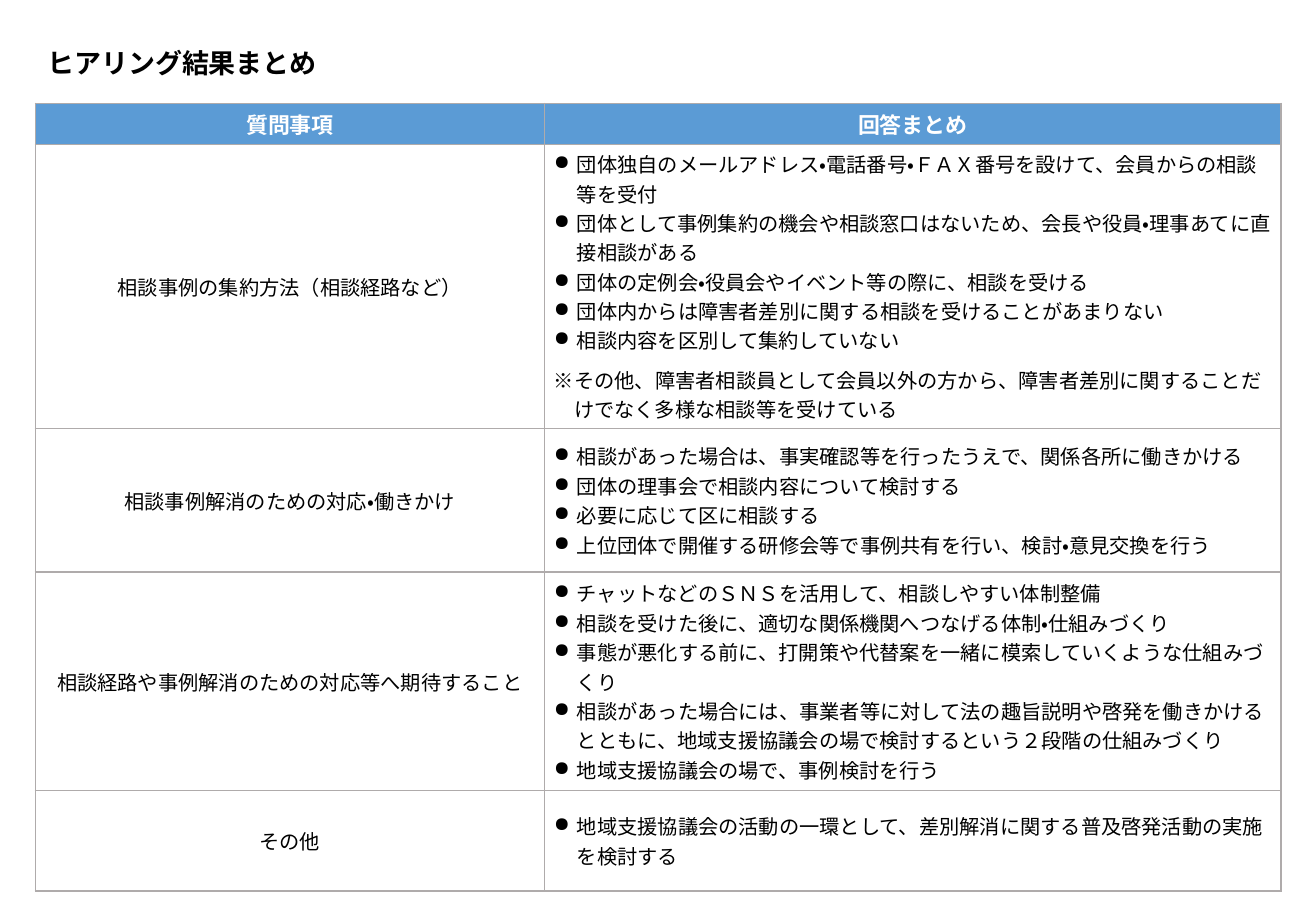
from dataclasses import dataclass

import lxml.etree
import pptx
import pptx.dml.color
import pptx.enum.lang
import pptx.enum.text
import pptx.oxml.ns
import pptx.util

Cm = pptx.util.Cm
Pt = pptx.util.Pt
Align = pptx.enum.text.PP_ALIGN
qn = pptx.oxml.ns.qn

FONT = "Calibri"
COLOURS = {
    "header": "5B9BD5",
    "header_text": "FFFFFF",
    "body": "FFFFFF",
    "text": "000000",
    "border": "AFABAB",
}
HEADINGS = ("質問事項", "回答まとめ")
COLUMN_WIDTHS = (10.64, 15.4)
HEADER_HEIGHT = 0.77
BULLET_INDENT = 0.48
NOTE_INDENT = 0.42


@dataclass(frozen=True)
class Topic:
    question: str
    answers: tuple[str, ...]
    height: float
    note: str = ""


TOPICS = (
    Topic(
        "相談事例の集約方法（相談経路など）",
        (
            "団体独自のメールアドレス・電話番号・ＦＡＸ番号を設けて、会員からの相談等を受付",
            "団体として事例集約の機会や相談窓口はないため、会長や役員・理事あてに直接相談がある",
            "団体の定例会・役員会やイベント等の際に、相談を受ける",
            "団体内からは障害者差別に関する相談を受けることがあまりない",
            "相談内容を区別して集約していない",
        ),
        5.9,
        "※その他、障害者相談員として会員以外の方から、障害者差別に関することだけでなく多様な相談等を受けている",
    ),
    Topic(
        "相談事例解消のための対応・働きかけ",
        (
            "相談があった場合は、事実確認等を行ったうえで、関係各所に働きかける",
            "団体の理事会で相談内容について検討する",
            "必要に応じて区に相談する",
            "上位団体で開催する研修会等で事例共有を行い、検討・意見交換を行う",
        ),
        3.0,
    ),
    Topic(
        "相談経路や事例解消のための対応等へ期待すること",
        (
            "チャットなどのＳＮＳを活用して、相談しやすい体制整備",
            "相談を受けた後に、適切な関係機関へつなげる体制・仕組みづくり",
            "事態が悪化する前に、打開策や代替案を一緒に模索していくような仕組みづくり",
            "相談があった場合には、事業者等に対して法の趣旨説明や啓発を働きかけるとともに、地域支援協議会の場で検討するという２段階の仕組みづくり",
            "地域支援協議会の場で、事例検討を行う",
        ),
        4.57,
    ),
    Topic(
        "その他",
        ("地域支援協議会の活動の一環として、差別解消に関する普及啓発活動の実施を検討する",),
        2.1,
    ),
)


def rgb(name: str) -> pptx.dml.color.RGBColor:
    return pptx.dml.color.RGBColor.from_string(COLOURS[name])


def format_runs(paragraph, size: float, colour: str, bold: bool = False) -> None:
    for run in paragraph.runs:
        run.font.name = FONT
        run.font.size = Pt(size)
        run.font.bold = bold
        run.font.color.rgb = rgb(colour)
        run.font.language_id = pptx.enum.lang.MSO_LANGUAGE_ID.JAPANESE


def set_hanging(paragraph, indent: float, bullet: str = "") -> None:
    properties = paragraph._p.get_or_add_pPr()
    properties.set("marL", str(Cm(indent)))
    properties.set("indent", str(-Cm(indent)))
    if bullet:
        lxml.etree.SubElement(properties, qn("a:buChar")).set("char", bullet)


def style_cell(cell, fill: str) -> None:
    cell.vertical_anchor = pptx.enum.text.MSO_ANCHOR.MIDDLE
    cell.margin_left = cell.margin_right = Cm(0.2)
    cell.margin_top = cell.margin_bottom = Cm(0.1)
    properties = cell._tc.get_or_add_tcPr()
    for side in ("lnL", "lnR", "lnT", "lnB"):
        border = lxml.etree.SubElement(properties, qn(f"a:{side}"), w=str(Pt(1)))
        border_fill = lxml.etree.SubElement(border, qn("a:solidFill"))
        lxml.etree.SubElement(border_fill, qn("a:srgbClr"), val=COLOURS["border"])
    cell.fill.solid()
    cell.fill.fore_color.rgb = rgb(fill)


def fill_centred(cell, text: str, size: float, fill: str, colour: str, bold: bool) -> None:
    style_cell(cell, fill)
    cell.text_frame.text = text
    paragraph = cell.text_frame.paragraphs[0]
    paragraph.alignment = Align.CENTER
    format_runs(paragraph, size, colour, bold)


def fill_answers(cell, topic: Topic) -> None:
    style_cell(cell, "body")
    cell.text_frame.text = "\n".join(topic.answers)
    for paragraph in cell.text_frame.paragraphs:
        set_hanging(paragraph, BULLET_INDENT, "●")
        format_runs(paragraph, 12, "text")
    if topic.note:
        cell.text_frame.paragraphs[-1].space_after = Pt(6)
        note = cell.text_frame.add_paragraph()
        note.text = topic.note
        set_hanging(note, NOTE_INDENT)
        format_runs(note, 12, "text")


def add_title(slide) -> None:
    title = slide.shapes.title
    title.left, title.top = Cm(0.74), Cm(0.84)
    title.width, title.height = Cm(6.76), Cm(0.94)
    title.text_frame.text = "ヒアリング結果まとめ"
    title.text_frame.word_wrap = False
    title.text_frame.auto_size = pptx.enum.text.MSO_AUTO_SIZE.NONE
    paragraph = title.text_frame.paragraphs[0]
    paragraph.alignment = Align.LEFT
    format_runs(paragraph, 16, "text", True)


def add_summary(slide) -> None:
    heights = (HEADER_HEIGHT, *(topic.height for topic in TOPICS))
    summary = slide.shapes.add_table(
        len(heights), len(HEADINGS), Cm(0.74), Cm(2.16),
        Cm(sum(COLUMN_WIDTHS)), Cm(sum(heights)),
    ).table
    for column, width in zip(summary.columns, COLUMN_WIDTHS):
        column.width = Cm(width)
    for row, height in zip(summary.rows, heights):
        row.height = Cm(height)
    for index, heading in enumerate(HEADINGS):
        fill_centred(summary.cell(0, index), heading, 13, "header", "header_text", True)
    for index, topic in enumerate(TOPICS, start=1):
        fill_centred(summary.cell(index, 0), topic.question, 12, "body", "text", False)
        fill_answers(summary.cell(index, 1), topic)


def main() -> None:
    deck = pptx.Presentation()
    deck.slide_width, deck.slide_height = Cm(27.51), Cm(19.05)
    slide = deck.slides.add_slide(deck.slide_layouts[5])
    add_title(slide)
    add_summary(slide)
    deck.save("out.pptx")


if __name__ == "__main__":
    main()
